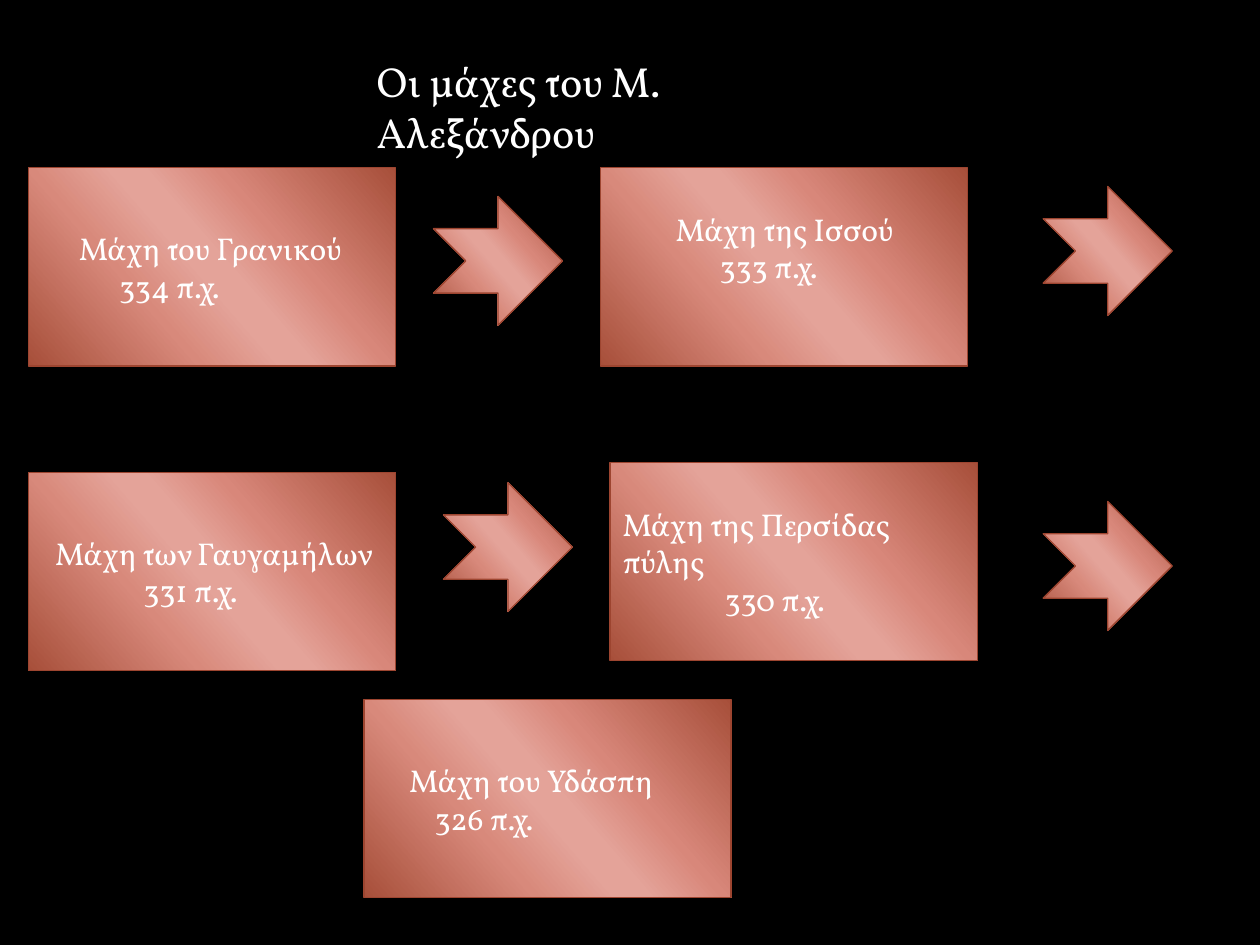
from lxml.etree import SubElement
from pptx import Presentation
from pptx.dml.color import RGBColor
from pptx.enum.shapes import MSO_SHAPE as SHAPE
from pptx.enum.text import MSO_ANCHOR as ANCHOR, MSO_AUTO_SIZE as AUTO, PP_ALIGN as ALIGN
from pptx.oxml.ns import qn
from pptx.util import Cm, Pt

COLORS = {"back": "000000", "text": "FFFFFF", "edge": "9D4530",
          "dark": "A74F3A", "rose": "D8877A", "pale": "E4A399", "rose2": "D8897B"}
STOPS = [(0, "dark"), (33, "rose"), (47, "pale"), (53, "pale"), (68, "rose2"), (100, "dark")]
FONT = "Vollkorn"
BOX_W, BOX_H, ARROW = 7.4, 4, 2.6
LINE_H = 0.78

# left, top, (line, indent) pairs, lines left free at the bottom
BATTLES = [
    (0.58, 3.38, [("Μάχη του Γρανικού", 0.76), ("334 π.χ.", 1.57)], 0),
    (12.1, 3.38, [("Μάχη της Ισσού", 1.27), ("333 π.χ.", 2.16)], 1),
    (0.58, 9.52, [("Μάχη των Γαυγαμήλων", 0.28), ("331 π.χ.", 2.06)], 0),
    (12.3, 9.32, [("Μάχη της Περσίδας πύλης", 0), ("330 π.χ.", 2.06)], 0),
    (7.34, 14.1, [("Μάχη του Υδάσπη", 0.66), ("326 π.χ.", 1.17)], 0),
]
ARROWS = [(8.74, 3.96), (21.03, 3.76), (8.94, 9.73), (21.03, 10.11)]


def rgb(name):
    return RGBColor.from_string(COLORS[name])


def write(p, text, size=18, color="text", indent=0):
    p.alignment = ALIGN.LEFT
    p._p.get_or_add_pPr().set("marL", str(Cm(indent)))
    r = p.add_run()
    r.text = text
    r.font.name, r.font.size = FONT, Pt(size)
    r.font.color.rgb = rgb(color)


def add_metal_shape(s, kind, left, top, width, height):
    """Add a shape with the shared copper gradient and outline."""
    sp = s.shapes.add_shape(kind, Cm(left), Cm(top), Cm(width), Cm(height))
    sp.shadow.inherit = False
    sp.line.color.rgb = rgb("edge")
    sp.line.width = Pt(0.75)
    sp.fill.gradient()
    sp.fill.gradient_angle = 221
    stops = sp._element.spPr.find(qn("a:gradFill")).find(qn("a:gsLst"))
    for stop in list(stops):
        stops.remove(stop)
    for percent, name in STOPS:
        stop = SubElement(stops, qn("a:gs"), pos=str(percent * 1000))
        SubElement(stop, qn("a:srgbClr"), val=COLORS[name])
    return sp


def add_battle(s, left, top, lines, free_lines):
    tf = add_metal_shape(s, SHAPE.RECTANGLE, left, top, BOX_W, BOX_H).text_frame
    tf.word_wrap = True
    tf.vertical_anchor = ANCHOR.MIDDLE
    tf.margin_bottom = Cm(0.13 + free_lines * LINE_H)
    for i, (text, indent) in enumerate(lines):
        write(tf.add_paragraph() if i else tf.paragraphs[0], text, indent=indent)


def add_title(s, left, top, width, height):
    title = s.shapes.title
    title.left, title.top, title.width, title.height = map(Cm, (left, top, width, height))
    tf = title.text_frame
    tf.word_wrap = True
    tf.auto_size = AUTO.NONE
    tf.vertical_anchor = ANCHOR.TOP
    tf.margin_right = Cm(2.5)
    write(tf.paragraphs[0], "Οι μάχες του Μ. Αλεξάνδρου", size=24)


def main():
    prs = Presentation()
    prs.slide_width, prs.slide_height = Cm(25.4), Cm(19.05)
    s = prs.slides.add_slide(prs.slide_layouts[5])
    s.background.fill.solid()
    s.background.fill.fore_color.rgb = rgb("back")
    add_title(s, 7.34, 1, 10.74, 1.28)
    for battle in BATTLES:
        add_battle(s, *battle)
    for left, top in ARROWS:
        add_metal_shape(s, SHAPE.NOTCHED_RIGHT_ARROW, left, top, ARROW, ARROW)
    prs.save("out.pptx")


if __name__ == "__main__":
    main()
